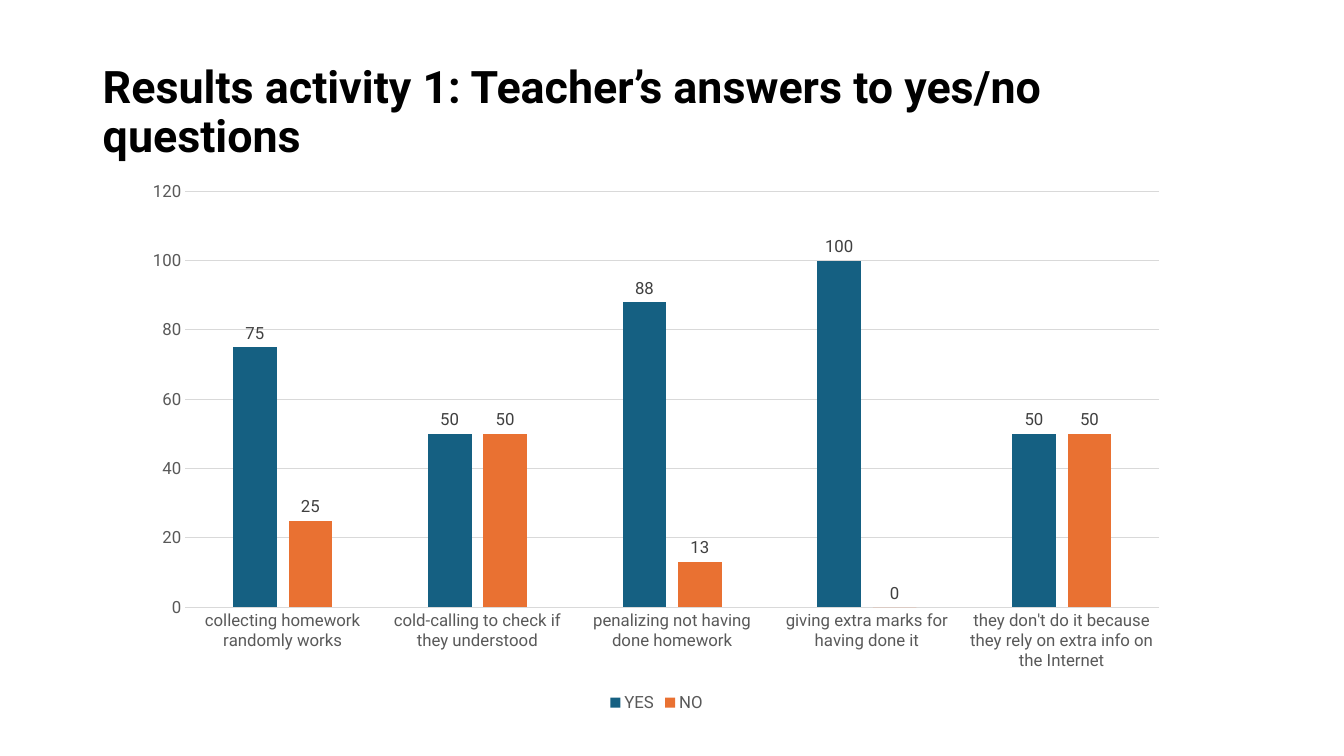
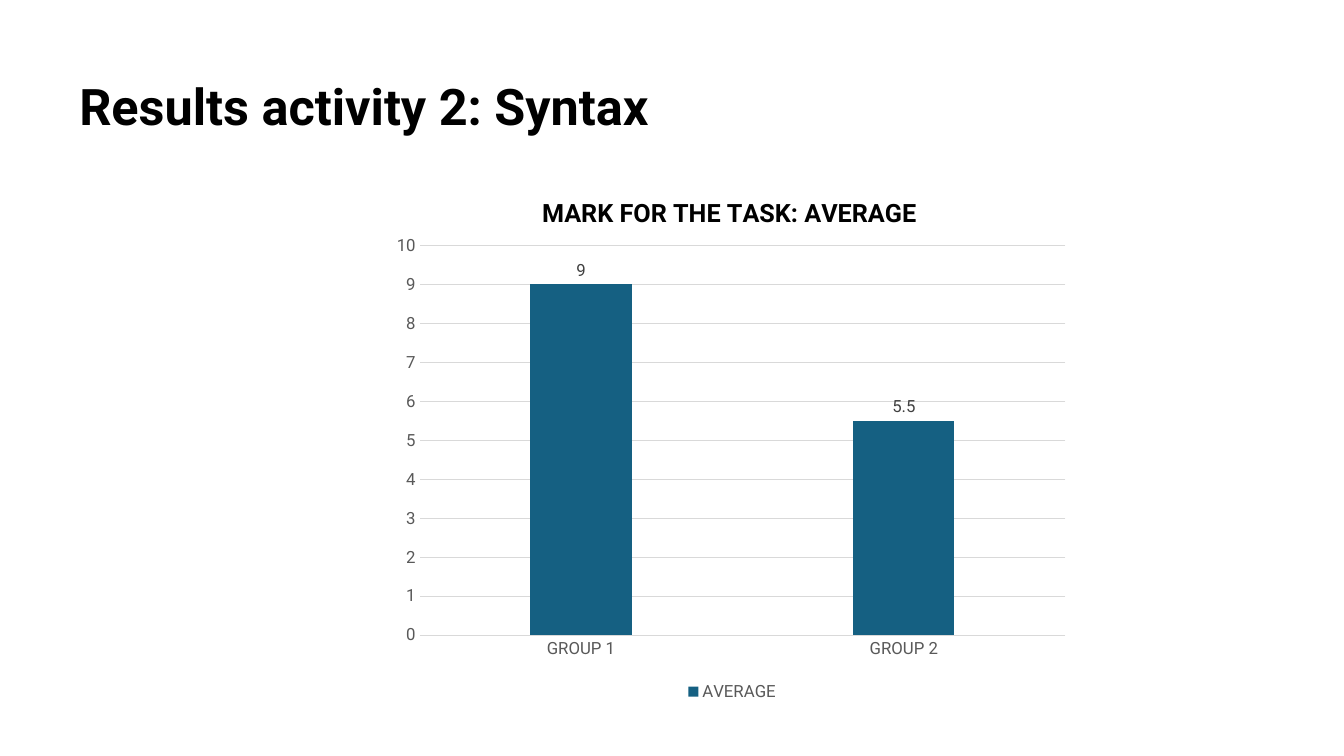
"""Build two slides of survey and syntax results as column charts."""
from dataclasses import dataclass
from typing import Any

from lxml import etree
from pptx import Presentation
from pptx.chart.data import CategoryChartData
from pptx.dml.color import RGBColor
from pptx.enum.chart import XL_CHART_TYPE, XL_LABEL_POSITION, XL_LEGEND_POSITION, XL_TICK_MARK
from pptx.enum.text import MSO_ANCHOR
from pptx.oxml.ns import qn
from pptx.util import Cm, Pt

COLUMN = XL_CHART_TYPE.COLUMN_CLUSTERED
ABOVE = XL_LABEL_POSITION.OUTSIDE_END
BOTTOM = XL_LEGEND_POSITION.BOTTOM
NO_TICK = XL_TICK_MARK.NONE
MIDDLE = MSO_ANCHOR.MIDDLE

COLORS = {"ink": "000000", "axis": "595959", "label": "404040", "grid": "D9D9D9",
          "blue": "156082", "orange": "E97132"}
FILLS = ("blue", "orange")
FACE = "Roboto"
TITLE_W, TITLE_H = 29.21, 3.68

PLOT = {"gap_width": 219, "overlap": -27, "vary_by_categories": False, "has_data_labels": True}
LABELS = {"show_value": True, "position": ABOVE}
LEGEND = {"position": BOTTOM, "include_in_layout": False}
TICKS = {"major_tick_mark": NO_TICK, "minor_tick_mark": NO_TICK}


@dataclass(frozen=True)
class Graph:
    """Hold the place, frame and data of one chart."""
    box: tuple[float, float, float, float]
    inner: tuple[float, float, float, float]
    cats: tuple[str, ...]
    series: dict[str, tuple[float, ...]]
    top: int
    step: int
    head: str = ""
    head_at: tuple[float, float] = (0, 0)


@dataclass(frozen=True)
class Page:
    """Hold the title and chart of one slide."""
    title: str
    size: int
    at: tuple[float, float]
    graph: Graph


PAGES = (
    Page("Results activity 1: Teacher’s answers to yes/no questions", 32, (2.34, 1.02), Graph(
        (3.35, 4.27, 26.39, 13.79), (0.05, 0.04, 0.93, 0.76),
        ("collecting homework randomly works",
         "cold-calling to check if they understood",
         "penalizing not having done homework",
         "giving extra marks for having done it",
         "they don't do it because they rely on extra info on the Internet"),
        {"YES": (75, 50, 88, 100, 50), "NO": (25, 50, 13, 0, 50)}, 120, 20)),
    Page("Results activity 2: Syntax", 36, (1.75, 0.91), Graph(
        (9.7, 4.14, 17.5, 13.64), (0.05, 0.15, 0.93, 0.72),
        ("GROUP 1", "GROUP 2"), {"AVERAGE": (9, 5.5)}, 10, 1,
        "MARK FOR THE TASK: AVERAGE", (0.22, 0.05))),
)


def apply(item: Any, values: dict[str, Any]) -> None:
    """Set each named attribute on the item."""
    for name, value in values.items():
        setattr(item, name, value)


def tint(name: str) -> RGBColor:
    """Look up a colour by name."""
    return RGBColor.from_string(COLORS[name])


def style(font: Any, size: int, color: str, bold: bool = False) -> None:
    """Give a font its face, size, weight and colour."""
    apply(font, {"name": FACE, "size": Pt(size), "bold": bold})
    font.color.rgb = tint(color)


def rule(line: Any) -> None:
    """Draw a line in the thin grid style."""
    line.color.rgb = tint("grid")
    line.width = Pt(0.75)


def layout(host: Any, index: int, values: dict[str, Any]) -> None:
    """Place a chart part by fractions of the chart."""
    for old in host.findall(qn("c:layout")):
        host.remove(old)
    outer = etree.Element(qn("c:layout"))
    manual = etree.SubElement(outer, qn("c:manualLayout"))
    for name, value in values.items():
        etree.SubElement(manual, qn(f"c:{name}")).set("val", str(value))
    host.insert(index, outer)


def add_title(slide: Any, page: Page) -> None:
    """Add the slide title."""
    box = slide.shapes.add_textbox(*map(Cm, (*page.at, TITLE_W, TITLE_H)))
    apply(box.text_frame, {"word_wrap": True, "vertical_anchor": MIDDLE})
    para = box.text_frame.paragraphs[0]
    para.line_spacing = 0.9
    run = para.add_run()
    run.text = page.title
    style(run.font, page.size, "ink", True)


def add_head(chart: Any, graph: Graph) -> None:
    """Add the chart title, if there is one."""
    chart.has_title = bool(graph.head)
    if not graph.head:
        return
    title = chart.chart_title
    run = title.text_frame.paragraphs[0].add_run()
    run.text = graph.head
    style(run.font, 18, "ink", True)
    left, top = graph.head_at
    layout(title._element, 1, {"xMode": "edge", "yMode": "edge", "x": left, "y": top})


def add_graph(slide: Any, graph: Graph) -> None:
    """Add a styled column chart."""
    data = CategoryChartData()
    data.categories = graph.cats
    for name, values in graph.series.items():
        data.add_series(name, values)
    chart = slide.shapes.add_chart(COLUMN, *map(Cm, graph.box), data).chart
    style(chart.font, 10, "ink")
    add_head(chart, graph)
    chart.has_legend = True
    apply(chart.legend, LEGEND)
    style(chart.legend.font, 12, "axis")

    plot = chart.plots[0]
    apply(plot, PLOT)
    apply(plot.data_labels, LABELS)
    style(plot.data_labels.font, 12, "label")
    for series, fill in zip(plot.series, FILLS):
        series.format.fill.solid()
        series.format.fill.fore_color.rgb = tint(fill)

    for axis in (chart.category_axis, chart.value_axis):
        apply(axis, TICKS)
        style(axis.tick_labels.font, 12, "axis")
    rule(chart.category_axis.format.line)
    scale = chart.value_axis
    apply(scale, {"minimum_scale": 0, "maximum_scale": graph.top,
                  "major_unit": graph.step, "has_major_gridlines": True})
    scale.format.line.fill.background()
    rule(scale.major_gridlines.format.line)

    frame = dict(zip("xywh", graph.inner))
    area = chart._chartSpace.find(".//" + qn("c:plotArea"))
    layout(area, 0, {"layoutTarget": "inner", "xMode": "edge", "yMode": "edge", **frame})


def main() -> None:
    """Build and save the slides."""
    deck = Presentation()
    apply(deck, {"slide_width": Cm(33.87), "slide_height": Cm(19.05)})
    for page in PAGES:
        slide = deck.slides.add_slide(deck.slide_layouts[6])
        add_title(slide, page)
        add_graph(slide, page.graph)
    deck.save("out.pptx")


if __name__ == "__main__":
    main()
